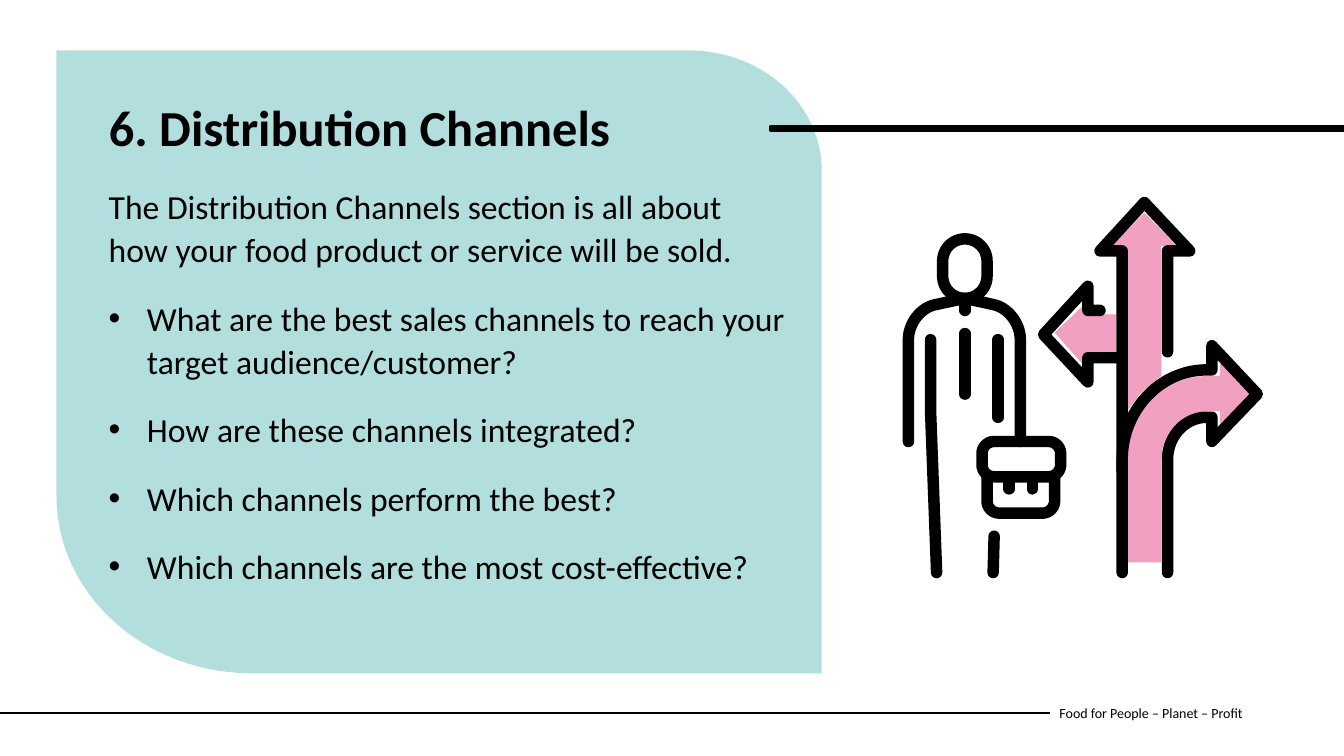
from dataclasses import dataclass
from math import cos, dist, pi, sin

from lxml.etree import SubElement
from pptx import Presentation
from pptx.dml.color import RGBColor
from pptx.enum.shapes import MSO_CONNECTOR, MSO_SHAPE
from pptx.enum.text import MSO_ANCHOR, MSO_AUTO_SIZE, PP_ALIGN
from pptx.oxml.ns import qn
from pptx.util import Inches, Pt


@dataclass(frozen=True)
class Theme:
    font: str = "Calibri"
    ink: RGBColor = RGBColor(0x00, 0x00, 0x00)
    panel: RGBColor = RGBColor(0xB2, 0xDE, 0xDD)
    accent: RGBColor = RGBColor(0xF1, 0xA0, 0xC2)
    title_size: float = 36
    body_size: float = 24
    footer_size: float = 10
    icon_stroke: float = 8.2


def rounded(corners, closed):
    """Points of a path; a corner is (x, y), (x, y, radius) or (x, y, radius in, radius out)."""
    points = []
    for index, (x, y, *radii) in enumerate(corners):
        if not radii:
            points.append((x, y))
            continue
        if not closed and index in (0, len(corners) - 1):
            raise ValueError("the ends of an open path cannot be rounded")
        vectors = []
        for (nx, ny, *_), radius in (
            (corners[index - 1], radii[0]),
            (corners[(index + 1) % len(corners)], radii[-1]),
        ):
            share = radius / dist((x, y), (nx, ny))
            vectors.append(((nx - x) * share, (ny - y) * share))
        (ax, ay), (bx, by) = vectors
        steps = 24
        for step in range(steps + 1):
            angle = pi / 2 * step / steps
            a, b = 1 - sin(angle), 1 - cos(angle)
            points.append((x + ax * a + bx * b, y + ay * a + by * b))
    return points


def box(left, top, right, bottom, radius):
    return [(left, top, radius), (right, top, radius),
            (right, bottom, radius), (left, bottom, radius)]


class SlideBuilder:
    def __init__(self, slide, theme):
        self.slide, self.shapes, self.theme = slide, slide.shapes, theme

    def paint(self, shape, color, line_width=None):
        shape.shadow.inherit = False
        shape.fill.solid()
        shape.fill.fore_color.rgb = color
        if line_width is None:
            shape.line.fill.background()
        else:
            shape.line.color.rgb = color
            shape.line.width = Pt(line_width)

    def outline(self, contours):
        builder = None
        for corners, closed in contours:
            start, *rest = [(Inches(x), Inches(y)) for x, y in rounded(corners, closed)]
            if builder is None:
                builder = self.shapes.build_freeform(*start, scale=1.0)
            else:
                builder.move_to(*start)
            builder.add_line_segments(rest, close=closed)
        return builder.convert_to_shape()

    def area(self, color, *contours):
        self.paint(self.outline([(corners, True) for corners in contours]), color)

    def stroke(self, *open_paths, loops=()):
        contours = [(path, False) for path in open_paths] + [(loop, True) for loop in loops]
        drawing = self.outline(contours)
        drawing.shadow.inherit = False
        drawing.fill.background()
        drawing.line.color.rgb = self.theme.ink
        drawing.line.width = Pt(self.theme.icon_stroke)
        line = drawing.line._get_or_add_ln()
        line.set("cap", "rnd")
        SubElement(line, qn("a:round"))

    def bar(self, left, top, width, height, line_width):
        bar = self.shapes.add_shape(MSO_SHAPE.RECTANGLE, Inches(left), Inches(top),
                                    Inches(width), Inches(height))
        self.paint(bar, self.theme.ink, line_width)

    def rule(self, x1, y1, x2, y2, width):
        rule = self.shapes.add_connector(MSO_CONNECTOR.STRAIGHT, Inches(x1), Inches(y1),
                                         Inches(x2), Inches(y2))
        rule.line.color.rgb = self.theme.ink
        rule.line.width = Pt(width)
        SubElement(rule._element.spPr, qn("a:effectLst"))

    def style(self, paragraph, size, bold=False):
        paragraph.alignment = PP_ALIGN.LEFT
        font = paragraph.font
        font.name, font.size, font.bold = self.theme.font, Pt(size), bold
        font.color.rgb = self.theme.ink

    def title(self, text, left, top, width, height):
        title = self.shapes.title
        title.left, title.top = Inches(left), Inches(top)
        title.width, title.height = Inches(width), Inches(height)
        frame = title.text_frame
        frame.text = text
        frame.auto_size = MSO_AUTO_SIZE.NONE
        frame.vertical_anchor = MSO_ANCHOR.TOP
        paragraph = frame.paragraphs[0]
        paragraph.line_spacing, paragraph.space_before = 0.9, Pt(10)
        self.style(paragraph, self.theme.title_size, bold=True)
        # Bring the title in front of the panel
        self.shapes._spTree.append(title._element)

    def text_frame(self, left, top, width, height):
        frame = self.shapes.add_textbox(Inches(left), Inches(top),
                                        Inches(width), Inches(height)).text_frame
        frame.word_wrap = True
        return frame

    def body(self, intro, questions, left, top, width, height):
        frame = self.text_frame(left, top, width, height)
        frame.text = "\n".join([intro, *questions])
        for index, paragraph in enumerate(frame.paragraphs):
            paragraph.line_spacing = 1.07
            paragraph.space_before, paragraph.space_after = Pt(10), Pt(8)
            if index:
                properties = paragraph._p.get_or_add_pPr()
                properties.set("marL", str(Inches(0.38)))
                properties.set("indent", str(-Inches(0.38)))
                SubElement(properties, qn("a:buFont"), typeface="Arial")
                SubElement(properties, qn("a:buChar"), char="•")
            self.style(paragraph, self.theme.body_size)

    def footer(self, text, left, top, width, height):
        frame = self.text_frame(left, top, width, height)
        frame.text = text
        frame.vertical_anchor = MSO_ANCHOR.MIDDLE
        self.style(frame.paragraphs[0], self.theme.footer_size)


def main():
    deck = Presentation()
    deck.slide_width, deck.slide_height = Inches(13.33), Inches(7.5)
    theme = Theme()
    page = SlideBuilder(deck.slides.add_slide(deck.slide_layouts[5]), theme)

    # Footer
    page.footer("Food for People – Planet – Profit", 10.41, 6.87, 2.73, 0.4)
    page.rule(0, 7.07, 10.41, 7.07, 1.5)

    # Panel and bar
    page.area(theme.panel, [(8.15, 6.68), (0.56, 6.68, 1.94, 1.76),
                            (0.56, 0.5), (8.15, 0.5, 1.32, 1.19)])
    page.bar(7.64, 1.25, 5.69, 0.05, 1.93)

    # Pink fill of the left arrow, then of the up and right arrows
    page.area(theme.accent, [(11.07, 3.12), (10.8, 3.12), (10.8, 2.98), (10.46, 3.3),
                             (10.77, 3.65), (10.77, 3.5), (11.07, 3.5)])
    page.area(
        theme.accent,
        [(11.02, 2.44), (11.35, 2.11), (11.67, 2.44), (11.52, 2.44), (11.52, 3.73),
         (11.33, 3.88), (11.17, 4.09), (11.17, 2.44)],
        [(12.1, 4.23), (12.1, 4.08), (11.52, 4.08, 0.47), (11.52, 5.58), (11.17, 5.58),
         (11.17, 3.73, 0.82), (12.1, 3.73), (12.1, 3.57), (12.43, 3.9)],
    )

    # Text
    page.body(
        "The Distribution Channels section is all about how your food product "
        "or service will be sold.",
        ["What are the best sales channels to reach your target audience/customer?",
         "How are these channels integrated?",
         "Which channels perform the best?",
         "Which channels are the most cost-effective?"],
        0.98, 1.77, 6.93, 3.31)
    page.title("6. Distribution Channels", 0.98, 0.97, 5.46, 1.09)

    # Salesperson: left side, right leg, right side, shirt front
    for limb in (
        [(9.23, 3.37), (9.23, 4.08), (9.29, 5.68)],
        [(9.86, 5.32), (9.85, 5.68)],
        [(9.9, 3.37), (9.9, 4.14)],
        [(9.57, 3.31), (9.57, 3.91)],
    ):
        page.stroke(limb)

    # Salesperson: shoulders, neck, head and briefcase
    shoulders = [(9.01, 4.38), (9.01, 3.08, 0.29, 0.27), (9.57, 2.96),
                 (10.12, 3.08, 0.27, 0.29), (10.12, 4.38)]
    neck = [(9.57, 2.97), (9.57, 3.08)]
    case = [(9.79, 4.73), (9.79, 5.09, 0.12), (10.46, 5.09, 0.12), (10.46, 4.73)]
    clasps = [[(x, 4.73), (x, 4.85)] for x in (10.01, 10.24)]
    page.stroke(shoulders, neck, case, *clasps,
                loops=[box(9.35, 2.37, 9.79, 2.96, 0.22), box(9.74, 4.38, 10.52, 4.73, 0.12)])

    # Outlines of the arrows
    up = [(11.13, 5.68), (11.13, 2.49), (10.91, 2.49), (11.35, 2.01), (11.8, 2.49),
          (11.58, 2.49), (11.58, 3.49)]
    left = [(10.91, 3.08), (10.79, 3.08), (10.79, 2.84), (10.35, 3.32), (10.79, 3.79),
            (10.79, 3.55), (11.13, 3.55)]
    right = [(11.13, 4.67), (11.13, 3.67, 0.89, 0.84), (12.02, 3.67), (12.02, 3.43),
             (12.47, 3.91), (12.02, 4.38), (12.02, 4.14), (11.58, 4.14, 0.39, 0.42),
             (11.58, 5.68)]
    page.stroke(up, left, right)

    deck.save("out.pptx")


if __name__ == "__main__":
    main()
